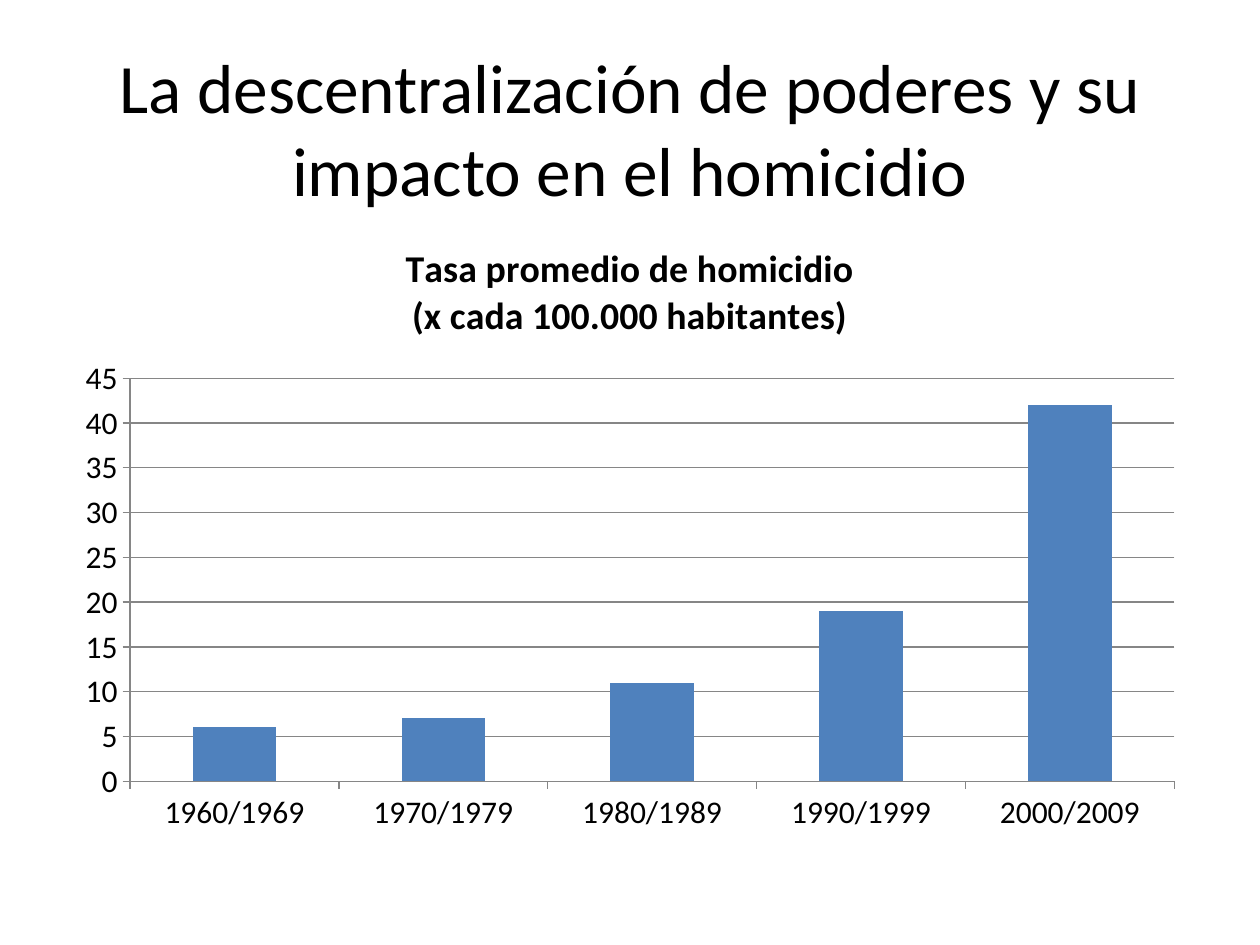
from pptx import Presentation
from pptx.chart.data import CategoryChartData
from pptx.dml.color import RGBColor
from pptx.enum.chart import XL_CHART_TYPE, XL_TICK_MARK
from pptx.enum.text import MSO_ANCHOR, PP_ALIGN
from pptx.util import Inches, Pt

COLUMNS = XL_CHART_TYPE.COLUMN_CLUSTERED
OUTSIDE = XL_TICK_MARK.OUTSIDE
CENTER = PP_ALIGN.CENTER
TOP = MSO_ANCHOR.TOP
TITLE_ONLY = 5


def rgb(value):
    return RGBColor.from_string(value)


class SlideBuilder:
    font, text, bar, grid = "Calibri", "000000", "4F81BD", "868686"

    def __init__(self, prs):
        self.s = prs.slides.add_slide(prs.slide_layouts[TITLE_ONLY])

    def style(self, font, size, bold=False):
        font.name, font.size, font.bold = self.font, Pt(size), bold
        font.color.rgb = rgb(self.text)

    def line(self, fmt):
        fmt.line.color.rgb = rgb(self.grid)
        fmt.line.width = Pt(0.75)

    def title(self, text, x, y, w, h, size):
        sp = self.s.shapes.title
        sp.left, sp.top, sp.width, sp.height = map(Inches, (x, y, w, h))
        tf = sp.text_frame
        tf.text = text
        tf.word_wrap = True
        tf.vertical_anchor = TOP
        p = tf.paragraphs[0]
        p.alignment = CENTER
        self.style(p.runs[0].font, size)

    def column_chart(self, title_lines, name, values, x, y, w, h, size, title_size):
        data = CategoryChartData()
        data.categories = list(values)
        data.add_series(name, list(values.values()))
        chart = self.s.shapes.add_chart(
            COLUMNS, Inches(x), Inches(y), Inches(w), Inches(h), data).chart
        chart.has_legend = False
        self.style(chart.font, size)

        # Chart title, one paragraph a line
        chart.has_title = True
        tf = chart.chart_title.text_frame
        tf.text = "\n".join(title_lines)
        for p in tf.paragraphs:
            self.style(p.runs[0].font, title_size, bold=True)

        # Columns
        plot = chart.plots[0]
        plot.gap_width = 150
        plot.vary_by_categories = False
        fill = plot.series[0].format.fill
        fill.solid()
        fill.fore_color.rgb = rgb(self.bar)

        # Axes and gridlines
        for axis in (chart.category_axis, chart.value_axis):
            axis.major_tick_mark = OUTSIDE
            self.line(axis.format)
        axis = chart.value_axis
        axis.minimum_scale, axis.maximum_scale, axis.major_unit = 0, 45, 5
        axis.tick_labels.number_format = "General"
        axis.tick_labels.number_format_is_linked = False
        self.line(axis.major_gridlines.format)


def main():
    prs = Presentation()
    prs.slide_width, prs.slide_height = Inches(10), Inches(7.5)
    slide = SlideBuilder(prs)
    slide.title("La descentralización de poderes y su impacto en el homicidio",
                0.5, 0.3, 9, 1.25, size=39.6)
    rates = {"1960/1969": 6, "1970/1979": 7, "1980/1989": 11,
             "1990/1999": 19, "2000/2009": 42}
    slide.column_chart(
        ["Tasa promedio de homicidio", "(x cada 100.000 habitantes)"],
        "Series 1", rates, 0.5, 1.75, 9, 4.95, size=18, title_size=21.6)
    prs.save("out.pptx")


if __name__ == "__main__":
    main()
